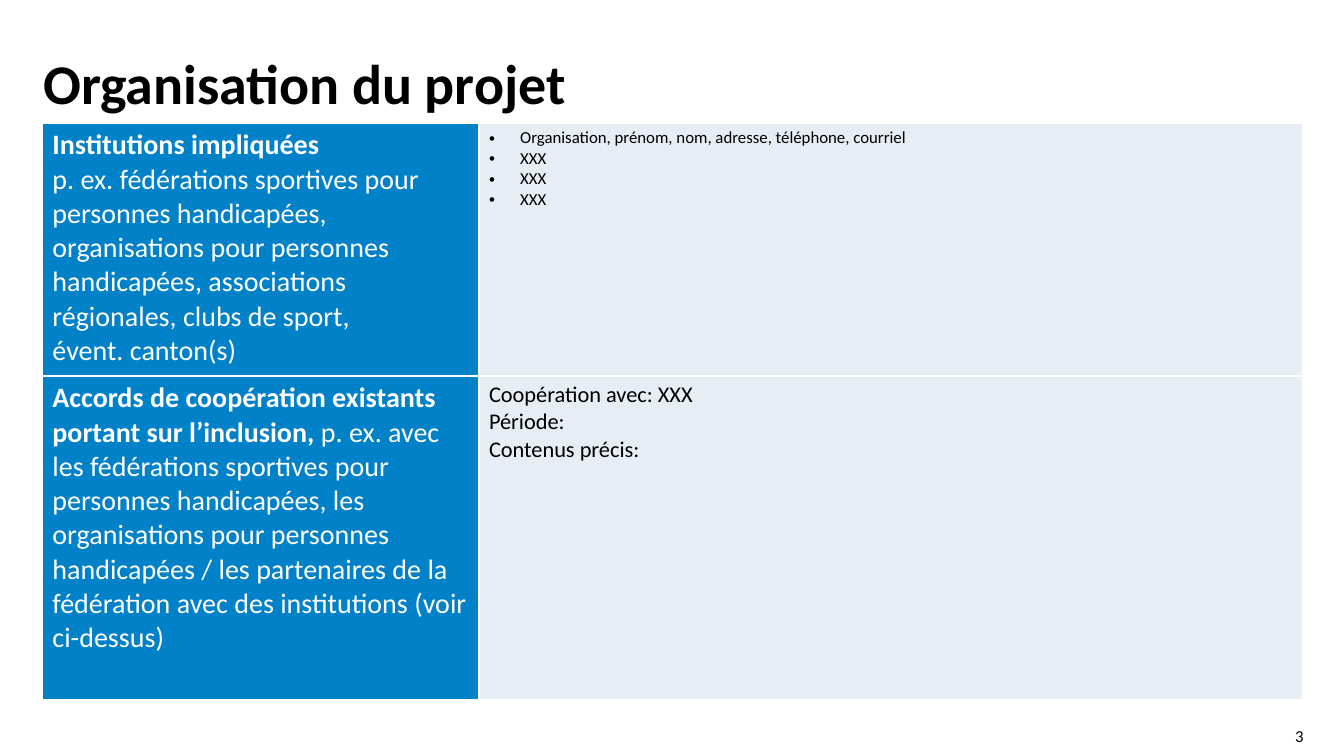
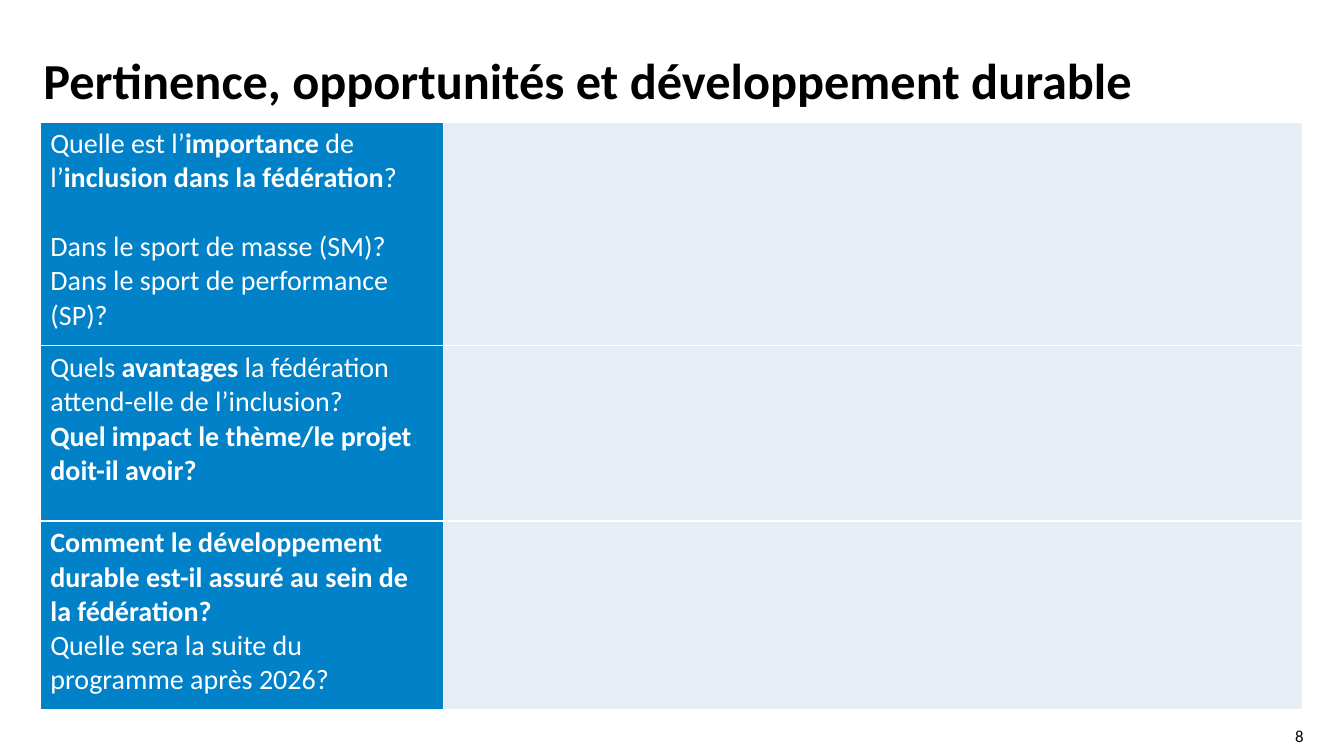
from lxml.etree import SubElement
from pptx import Presentation
from pptx.dml.color import RGBColor
from pptx.enum.text import MSO_ANCHOR, MSO_AUTO_SIZE, PP_ALIGN
from pptx.oxml.ns import qn
from pptx.util import Inches, Pt

COLORS = {"text": "000000", "label": "0081C8", "answer": "E7EDF5", "white": "FFFFFF"}
FONT = "Calibri"
LABEL_SIZE = 20
BLANK_LINE = Pt(24.4)


def style_font(font, size, color, bold=False):
    font.name = FONT
    font.size = Pt(size)
    font.bold = bold
    font.color.rgb = RGBColor.from_string(COLORS[color])


def clear_margins(text_frame):
    text_frame.margin_left = text_frame.margin_right = 0
    text_frame.margin_top = text_frame.margin_bottom = 0
    text_frame.word_wrap = True


def add_title(slide, text, size, box):
    title = slide.shapes.title
    title.left, title.top, title.width, title.height = map(Inches, box)
    text_frame = title.text_frame
    clear_margins(text_frame)
    text_frame.auto_size = MSO_AUTO_SIZE.NONE
    text_frame.vertical_anchor = MSO_ANCHOR.TOP
    text_frame.text = text
    paragraph = text_frame.paragraphs[0]
    paragraph.alignment = PP_ALIGN.LEFT
    paragraph.line_spacing = 0.9
    style_font(paragraph.runs[0].font, size, "text", True)


def add_page_number(slide, number, box):
    text_frame = slide.shapes.add_textbox(*map(Inches, box)).text_frame
    clear_margins(text_frame)
    text_frame.vertical_anchor = MSO_ANCHOR.MIDDLE
    text_frame.text = str(number)
    paragraph = text_frame.paragraphs[0]
    paragraph.alignment = PP_ALIGN.RIGHT
    style_font(paragraph.runs[0].font, 12, "text")


def add_bullet(paragraph):
    properties = paragraph._p.get_or_add_pPr()
    indent = Inches(0.31)
    properties.set("marL", str(indent))
    properties.set("indent", str(-indent))
    SubElement(properties, qn("a:buFont")).set("typeface", "Arial")
    SubElement(properties, qn("a:buChar")).set("char", "•")


def fill_cell(cell, lines, size, fill, color, bulleted=False):
    """Write one paragraph per line; ** switches bold, a leading ^ leaves a gap above."""
    # Borders come before the fill in the cell properties
    properties = cell._tc.get_or_add_tcPr()
    for side in ("lnL", "lnR", "lnT", "lnB"):
        line = SubElement(properties, qn(f"a:{side}"), w=str(Pt(1)))
        solid = SubElement(line, qn("a:solidFill"))
        SubElement(solid, qn("a:srgbClr")).set("val", COLORS["white"])
    cell.fill.solid()
    cell.fill.fore_color.rgb = RGBColor.from_string(COLORS[fill])

    text_frame = cell.text_frame
    for index, text in enumerate(lines):
        paragraph = text_frame.add_paragraph() if index else text_frame.paragraphs[0]
        if text.startswith("^"):
            paragraph.space_before = BLANK_LINE
        if bulleted:
            add_bullet(paragraph)
        for part, words in enumerate(text.lstrip("^").split("**")):
            if words:
                run = paragraph.add_run()
                run.text = words
                style_font(run.font, size, color, part % 2 == 1)


def add_question_table(slide, box, label_width, rows):
    left, top, width, height = box
    table = slide.shapes.add_table(
        len(rows), 2, Inches(left), Inches(top), Inches(width), Inches(height)).table
    table.first_row = table.horz_banding = False
    table.columns[0].width = Inches(label_width)
    table.columns[1].width = Inches(width - label_width)
    for index, (row_height, label, answer) in enumerate(rows):
        table.rows[index].height = Inches(row_height)
        fill_cell(table.cell(index, 0), label, LABEL_SIZE, "label", "white")
        fill_cell(table.cell(index, 1), fill="answer", color="text", **answer)


def add_form_slide(presentation, number, title, title_size, box, label_width, rows):
    slide = presentation.slides.add_slide(presentation.slide_layouts[5])
    add_page_number(slide, number, (12.46, 7.2, 0.47, 0.2))
    add_question_table(slide, box, label_width, rows)
    add_title(slide, title, title_size, (0.43, 0.56, 10.98, 0.85))


EMPTY = {"lines": [], "size": 16}

# Row: height, label lines, answer
ORGANISATION_ROWS = [
    (2.51,
     ["**Institutions impliquées**",
      "p. ex. fédérations sportives pour personnes handicapées, organisations pour "
      "personnes handicapées, associations régionales, clubs de sport,",
      "évent. canton(s)"],
     {"lines": ["Organisation, prénom, nom, adresse, téléphone, courriel"] + ["XXX"] * 3,
      "size": 12, "bulleted": True}),
    (3.21,
     ["**Accords de coopération existants portant sur l’inclusion, **p. ex. avec les "
      "fédérations sportives pour personnes handicapées, les organisations pour personnes "
      "handicapées / les partenaires de la fédération avec des institutions (voir ci-dessus)"],
     {"lines": ["Coopération avec: XXX", "Période:", "Contenus précis:"], "size": 16}),
]

RELEVANCE_ROWS = [
    (2.22,
     ["Quelle est l’**importance** de l’**inclusion dans la fédération**?",
      "^Dans le sport de masse (SM)?",
      "Dans le sport de performance (SP)?"],
     EMPTY),
    (1.74,
     ["Quels **avantages** la fédération attend-elle de l’inclusion?",
      "**Quel impact le thème/le projet doit-il avoir?**"],
     EMPTY),
    (1.87,
     ["**Comment le développement durable est-il assuré au sein de la fédération?**",
      "Quelle sera la suite du programme après 2026?"],
     EMPTY),
]


def main():
    presentation = Presentation()
    presentation.slide_width = Inches(13.33)
    presentation.slide_height = Inches(7.5)
    add_form_slide(presentation, 3, "Organisation du projet", 40,
                   (0.42, 1.22, 12.5, 5.72), 4.33, ORGANISATION_ROWS)
    add_form_slide(presentation, 8, "Pertinence, opportunités et développement durable", 36,
                   (0.4, 1.21, 12.52, 5.83), 4, RELEVANCE_ROWS)
    presentation.save("out.pptx")


if __name__ == "__main__":
    main()
